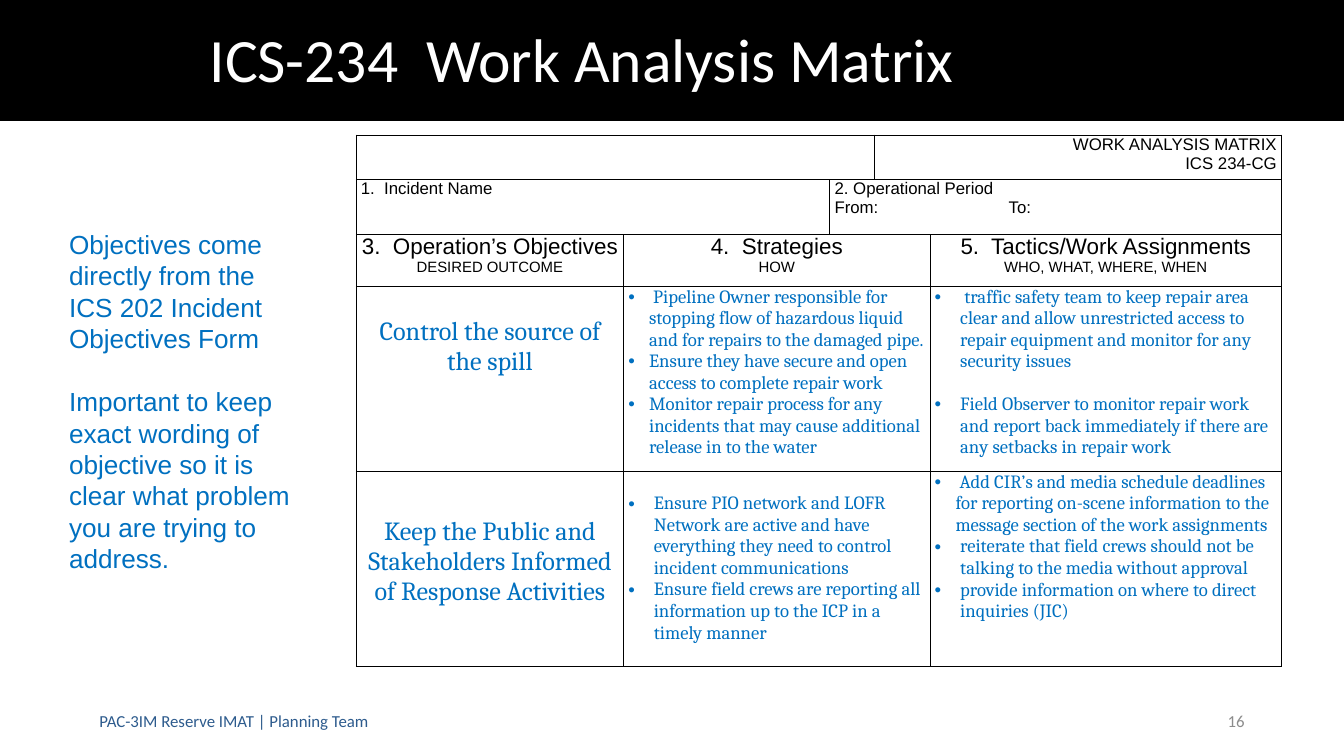
from lxml.etree import SubElement
from pptx import Presentation
from pptx.dml.color import RGBColor
from pptx.enum.shapes import MSO_SHAPE
from pptx.enum.text import MSO_ANCHOR, MSO_AUTO_SIZE, PP_ALIGN
from pptx.oxml import parse_xml
from pptx.oxml.ns import nsdecls, qn
from pptx.util import Inches, Pt

BLACK = RGBColor(0, 0, 0)
WHITE = RGBColor(255, 255, 255)
BLUE = RGBColor(0x00, 0x70, 0xC0)
NAVY = RGBColor(0x2D, 0x5B, 0x8D)
GRAY = RGBColor(0x8C, 0x8C, 0x8C)
LEFT, MID, RIGHT = PP_ALIGN.LEFT, PP_ALIGN.CENTER, PP_ALIGN.RIGHT

COLS = [3.98, 3.07, 0.66, 0.83, 5.23]
ROWS = [0.66, 0.82, 0.77, 2.76, 2.9]
SPANS = [(0, 0, 2), (0, 3, 4), (1, 0, 1), (1, 2, 4), (2, 1, 3), (3, 1, 3), (4, 1, 3)]
HEADS = [
    (0, "3.  Operation’s Objectives", "DESIRED OUTCOME"),
    (1, "4.  Strategies", "HOW"),
    (4, "5.  Tactics/Work Assignments", "WHO, WHAT, WHERE, WHEN"),
]
GOALS = [
    (3, 0.46, "Control the source of the spill"),
    (4, 0.68, "Keep the Public and Stakeholders Informed of Response Activities"),
]
LISTS = [
    (3, 1, 0, 0, [
        (0.31, " Pipeline Owner responsible for stopping flow of hazardous liquid and for repairs to the damaged pipe."),
        (0.31, "Ensure they have secure and open access to complete repair work"),
        (0.31, "Monitor repair process for any incidents that may cause additional release in to the water"),
    ]),
    (3, 4, 0, 23, [
        (0.38, " traffic safety team to keep repair area clear and allow unrestricted access to repair equipment and monitor for any security issues"),
        (0.38, "Field Observer to monitor repair work and report back immediately if there are any setbacks in repair work"),
    ]),
    (4, 1, 0.32, 0, [
        (0.38, "Ensure PIO network and LOFR Network are active and have everything they need to control incident communications"),
        (0.38, "Ensure field crews are reporting all information up to the ICP in a timely manner"),
    ]),
    (4, 4, 0, 0, [
        (0.31, " Add CIR’s and media schedule deadlines for reporting on-scene information to the message section of the work assignments"),
        (0.38, "reiterate that field crews should not be talking to the media without approval"),
        (0.38, "provide information on where to direct inquiries (JIC)"),
    ]),
]
NOTES = [
    "Objectives come directly from the ICS 202 Incident Objectives Form",
    "Important to keep exact wording of objective so it is clear what problem you are trying to address.",
]


def write(frame, lines, size, face, color, align=LEFT, gap=0):
    """Fill a text frame with one paragraph per line and return them."""
    frame.text = "\n".join(lines)
    for i, para in enumerate(frame.paragraphs):
        para.alignment = align
        if i and gap:
            para.space_before = Pt(gap)
        for run in para.runs:
            font = run.font
            font.size, font.name, font.bold = Pt(size), face, False
            font.color.rgb = color
    return frame.paragraphs


def add_text(slide, box, lines, size, face, color, align=LEFT, gap=0, anchor=MSO_ANCHOR.TOP):
    """Add a wrapping text box and return its frame."""
    frame = slide.shapes.add_textbox(*map(Inches, box)).text_frame
    frame.word_wrap = True
    frame.vertical_anchor = anchor
    write(frame, lines, size, face, color, align, gap)
    return frame


def add_title(slide):
    """Place the title on a black bar."""
    shapes = slide.shapes
    bar = shapes.add_shape(MSO_SHAPE.RECTANGLE, 0, 0, Inches(20), Inches(1.8))
    bar.shadow.inherit = False
    bar.fill.solid()
    bar.fill.fore_color.rgb = BLACK
    bar.line.fill.background()
    shapes._spTree.insert(2, bar._element)
    title = shapes.title
    title.left, title.top = Inches(3.02), Inches(0.05)
    title.width, title.height = Inches(16.62), Inches(1.77)
    frame = title.text_frame
    frame.auto_size = MSO_AUTO_SIZE.NONE
    frame.vertical_anchor = MSO_ANCHOR.MIDDLE
    para = write(frame, ["ICS-234  Work Analysis Matrix"], 66, "Calibri", WHITE)[0]
    para.line_spacing = 0.9


def style(cell):
    """Give a cell thin black borders, no fill and tight margins."""
    cell.margin_left = cell.margin_right = Inches(0.07)
    cell.margin_top = cell.margin_bottom = 0
    cell.fill.background()
    props = cell._tc.get_or_add_tcPr()
    for i, side in enumerate(("lnL", "lnR", "lnT", "lnB")):
        props.insert(i, parse_xml(
            f'<a:{side} {nsdecls("a")} w="12700"><a:solidFill>'
            f'<a:srgbClr val="{BLACK}"/></a:solidFill></a:{side}>'))


def add_bullet(para, indent):
    """Give a paragraph a hanging round bullet."""
    props = para._p.get_or_add_pPr()
    props.set("marL", str(Inches(indent)))
    props.set("indent", str(-Inches(indent)))
    SubElement(props, qn("a:buFont"), typeface="Arial")
    SubElement(props, qn("a:buChar"), char="•")


def add_tab(para, place):
    """Set one left tab stop in a paragraph."""
    tabs = SubElement(para._p.get_or_add_pPr(), qn("a:tabLst"))
    SubElement(tabs, qn("a:tab"), pos=str(Inches(place)), algn="l")


def add_grid(slide):
    """Add the empty form table with its merged cells."""
    box = map(Inches, (5.3, 2.01, sum(COLS), sum(ROWS)))
    table = slide.shapes.add_table(len(ROWS), len(COLS), *box).table
    table.first_row = table.horz_banding = False
    for col, width in zip(table.columns, COLS):
        col.width = Inches(width)
    for row, height in zip(table.rows, ROWS):
        row.height = Inches(height)
        for cell in row.cells:
            style(cell)
    for row, start, end in SPANS:
        table.cell(row, start).merge(table.cell(row, end))
    return table


def fill_form(table):
    """Write the form labels and column heads."""
    for row, col, align, lines in (
        (0, 3, RIGHT, ["WORK ANALYSIS MATRIX", "ICS 234-CG"]),
        (1, 0, LEFT, ["1.  Incident Name"]),
        (1, 2, LEFT, ["2. Operational Period", "From:\tTo:"]),
    ):
        paras = write(table.cell(row, col).text_frame, lines, 18, "Arial", BLACK, align)
    add_tab(paras[1], 2.59)
    for col, *lines in HEADS:
        paras = write(table.cell(2, col).text_frame, lines, 24, "Arial", BLACK, MID)
        paras[1].runs[0].font.size = Pt(16)


def fill_plan(table):
    """Write the objectives, strategies and tactics."""
    for row, top, goal in GOALS:
        cell = table.cell(row, 0)
        cell.margin_top = Inches(top)
        write(cell.text_frame, [goal], 28, "Cambria", BLUE, MID)
    for row, col, top, gap, items in LISTS:
        cell = table.cell(row, col)
        cell.margin_top = Inches(top)
        lines = [line for _, line in items]
        paras = write(cell.text_frame, lines, 20, "Cambria", BLUE, gap=gap)
        for para, (indent, _) in zip(paras, items):
            add_bullet(para, indent)


def main():
    """Build and save the slide."""
    deck = Presentation()
    deck.slide_width, deck.slide_height = Inches(20), Inches(11.25)
    slide = deck.slides.add_slide(deck.slide_layouts[5])
    add_title(slide)
    mid = MSO_ANCHOR.MIDDLE
    add_text(slide, (1.38, 10.43, 9.1, 0.6), ["PAC-3IM Reserve IMAT | Planning Team"],
             18, "Calibri", NAVY, anchor=mid)
    add_text(slide, (14.12, 10.43, 4.5, 0.6), ["16"], 18, "Calibri", GRAY, RIGHT, anchor=mid)
    table = add_grid(slide)
    fill_form(table)
    fill_plan(table)
    notes = add_text(slide, (0.93, 3.35, 3.64, 5.28), NOTES, 28, "Arial", BLUE, gap=34)
    notes.auto_size = MSO_AUTO_SIZE.SHAPE_TO_FIT_TEXT
    deck.save("out.pptx")


if __name__ == "__main__":
    main()
